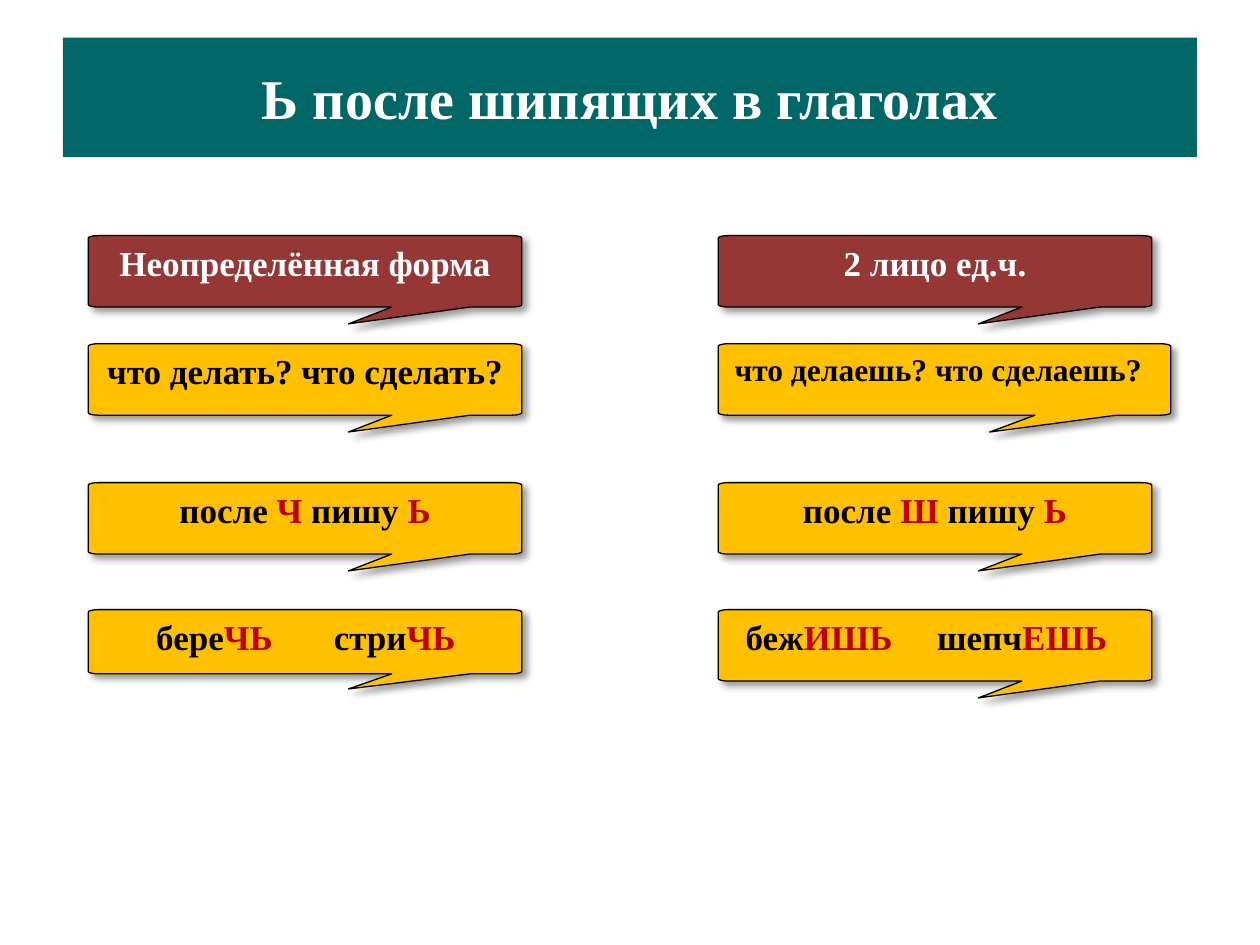
from math import cos, pi, sin

from lxml.etree import SubElement
from pptx import Presentation
from pptx.dml.color import RGBColor
from pptx.enum.shapes import MSO_SHAPE
from pptx.enum.text import MSO_ANCHOR, PP_ALIGN
from pptx.oxml.ns import qn
from pptx.util import Cm, Pt

COLORS = {
    "teal": "006666",
    "maroon": "953735",
    "amber": "FFC000",
    "red": "C00000",
    "black": "000000",
    "white": "FFFFFF",
}
FONT = "Times New Roman"
LEFT_COLUMN, RIGHT_COLUMN = 1.78, 14.48
HEADING_ROW, QUESTION_ROW, RULE_ROW, EXAMPLE_ROW = 4.75, 6.93, 9.73, 12.29
WIDTH, HEIGHT = 8.74, 1.78

# Left, top, width, height, text (*red letters*), size, start of
# left-aligned text (None: centred), tab stop; lengths in cm
CALLOUTS = [
    (LEFT_COLUMN, HEADING_ROW, WIDTH, HEIGHT, "Неопределённая форма", 20, None, None),
    (LEFT_COLUMN, QUESTION_ROW, WIDTH, HEIGHT, "что делать? что сделать?", 20, None, None),
    (LEFT_COLUMN, RULE_ROW, WIDTH, HEIGHT, "после *Ч* пишу* Ь*", 20, None, None),
    (LEFT_COLUMN, EXAMPLE_ROW, WIDTH, 1.6, "бере*ЧЬ*\tстри*ЧЬ*", 20, 1.37, 3.58),
    (RIGHT_COLUMN, HEADING_ROW, WIDTH, HEIGHT, "2 лицо ед.ч.", 20, None, None),
    (RIGHT_COLUMN, QUESTION_ROW, 9.12, HEIGHT, "что делаешь? что сделаешь?", 18, 0.33, None),
    (RIGHT_COLUMN, RULE_ROW, WIDTH, HEIGHT, "после *Ш* пишу* Ь*", 20, None, None),
    (RIGHT_COLUMN, EXAMPLE_ROW, WIDTH, HEIGHT, "беж*ИШЬ*\tшепч*ЕШЬ*", 20, 0.55, 3.86),
]


def rgb(name):
    return RGBColor.from_string(COLORS[name])


def callout_points(left, top, width, height):
    """Outline in cm: a box with flat elliptical corners and a tail below."""
    rx, ry = 0.22, 0.05
    right, bottom = left + width, top + 0.81 * height
    tail = [(left + 0.88 * width, bottom),
            (left + 0.6 * width, top + height),
            (left + 0.7 * width, bottom)]
    corners = [(right - rx, top + ry, -90), (right - rx, bottom - ry, 0),
               (left + rx, bottom - ry, 90), (left + rx, top + ry, 180)]
    points = []
    for index, (x, y, start) in enumerate(corners):
        if index == 2:
            points += tail
        for step in range(5):
            angle = (start + 22.5 * step) * pi / 180
            points.append((x + rx * cos(angle), y + ry * sin(angle)))
    return [(Cm(x), Cm(y)) for x, y in points]


prs = Presentation()
prs.slide_width, prs.slide_height = Cm(25.4), Cm(19.05)
slide = prs.slides.add_slide(prs.slide_layouts[6])

banner = slide.shapes.add_shape(
    MSO_SHAPE.RECTANGLE, Cm(1.27), Cm(0.76), Cm(22.86), Cm(2.41))
banner.shadow.inherit = False
banner.fill.solid()
banner.fill.fore_color.rgb = rgb("teal")
banner.line.fill.background()
banner.text_frame.vertical_anchor = MSO_ANCHOR.MIDDLE
title = banner.text_frame.paragraphs[0]
title.text = "Ь после шипящих в глаголах"
title.alignment = PP_ALIGN.CENTER
title.font.name, title.font.size, title.font.bold = FONT, Pt(32), True
title.font.color.rgb = rgb("white")

for left, top, width, height, text, size, text_start, tab in CALLOUTS:
    is_heading = top == HEADING_ROW
    points = callout_points(left, top, width, height)
    outline = slide.shapes.build_freeform(*points[0])
    outline.add_line_segments(points[1:], close=True)
    callout = outline.convert_to_shape()
    callout.fill.solid()
    callout.fill.fore_color.rgb = rgb("maroon" if is_heading else "amber")
    callout.line.color.rgb = rgb("black")
    callout.line.width = Pt(0.75)

    callout.shadow.inherit = False
    effects = callout._element.spPr.find(qn("a:effectLst"))
    shadow = SubElement(effects, qn("a:outerShdw"), blurRad=str(Pt(4)),
                        dist=str(Pt(3)), dir="2700000", algn="tl", rotWithShape="0")
    shade = SubElement(shadow, qn("a:srgbClr"), val=COLORS["black"])
    SubElement(shade, qn("a:alpha"), val="40000")

    frame = callout.text_frame
    frame.word_wrap = True
    frame.vertical_anchor = MSO_ANCHOR.TOP
    phrase = frame.paragraphs[0]
    phrase.font.name, phrase.font.size, phrase.font.bold = FONT, Pt(size), True
    phrase.alignment = PP_ALIGN.CENTER
    if text_start is not None:
        phrase.alignment = PP_ALIGN.LEFT
        frame.margin_left = Cm(text_start)
    if tab is not None:
        tabs = phrase._p.get_or_add_pPr()
        stops = tabs.makeelement(qn("a:tabLst"))
        tabs.insert(0, stops)
        SubElement(stops, qn("a:tab"), pos=str(Cm(tab)), algn="l")
    for index, part in enumerate(text.split("*")):
        if part:
            run = phrase.add_run()
            run.text = part
            base = "white" if is_heading else "black"
            run.font.color.rgb = rgb("red" if index % 2 else base)

prs.save("out.pptx")
